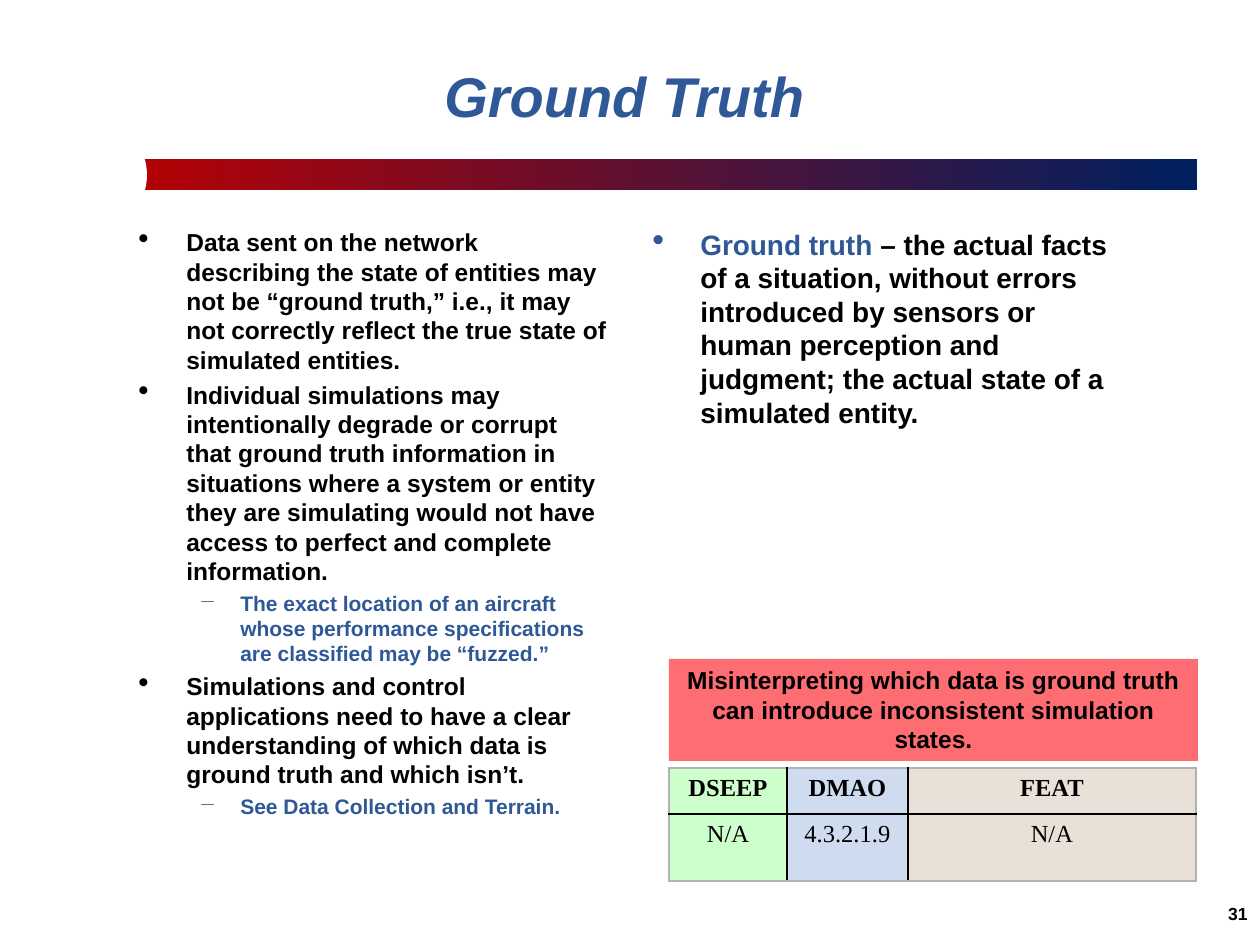
import pptx
import pptx.util
import pptx.dml.color
import pptx.enum.shapes
import pptx.enum.text
import pptx.oxml
import pptx.oxml.ns

THEME = {
    "blue": "2F5897", "black": "000000", "white": "FFFFFF", "red": "FD6D71",
    "grey": "B2B2B2", "start": "C00000", "end": "002060",
    "cols": ("CCFFCC", "CFDCF0", "E9E0D7"),
    "sans": "Arial", "serif": "Times New Roman",
    "title": 32, "lead": 16, "body": 14, "sub": 12, "page": 10,
}
TITLE = "Ground Truth"
POINTS = [
    (0, "Data sent on the network describing the state of entities may not be “ground truth,” i.e., it may not correctly reflect the true state of simulated entities."),
    (0, "Individual simulations may intentionally degrade or corrupt that ground truth information in situations where a system or entity they are simulating would not have access to perfect and complete information."),
    (1, "The exact location of an aircraft whose performance specifications are classified may be “fuzzed.”"),
    (0, "Simulations and control applications need to have a clear understanding of which data is ground truth and which isn’t."),
    (1, "See Data Collection and Terrain."),
]
TERM = "Ground truth "
MEANING = "– the actual facts of a situation, without errors introduced by sensors or human perception and judgment; the actual state of a simulated entity."
WARNING = "Misinterpreting which data is ground truth can introduce inconsistent simulation states."
ROWS = [("DSEEP", "DMAO", "FEAT"), ("N/A", "4.3.2.1.9", "N/A")]
WIDTHS = (118, 121, 288)
HEIGHTS = (46, 67)
LEVELS = [
    {"size": THEME["body"], "color": THEME["black"], "bullet": ("•", 125, 48, 48)},
    {"size": THEME["sub"], "color": THEME["blue"], "bullet": ("―", 60, 102, 39)},
]
SCALE = 914400 / 126
ALIGN = pptx.enum.text.PP_ALIGN
SHAPE = pptx.enum.shapes.MSO_SHAPE


def px(num):
    return pptx.util.Emu(round(num * SCALE))


def rgb(code):
    return pptx.dml.color.RGBColor.from_string(code)


def write(para, text, size=THEME["body"], color=THEME["black"], font=THEME["sans"],
          bold=True, italic=False, align=ALIGN.LEFT, bullet=None, gap=0):
    if bullet:
        mark, scale, left, hang = bullet
        props = para._p.get_or_add_pPr()
        props.set("marL", str(px(left)))
        props.set("indent", str(-px(hang)))
        for tag, key, val in (("buSzPct", "val", str(scale * 1000)), ("buChar", "char", mark)):
            item = pptx.oxml.ns.qn("a:" + tag)
            props.append(props.makeelement(item, {key: val}))
    para.alignment = align
    para.space_before = pptx.util.Pt(gap)
    run = para.add_run()
    run.text = text
    face = run.font
    face.name, face.size = font, pptx.util.Pt(size)
    face.bold, face.italic = bold, italic
    face.color.rgb = rgb(color)


def box(slide, *area):
    frame = slide.shapes.add_textbox(*map(px, area)).text_frame
    frame.word_wrap = True
    return frame


def block(slide, kind, color, *area):
    shape = slide.shapes.add_shape(kind, *map(px, area))
    shape.shadow.inherit = False
    shape.line.fill.background()
    shape.fill.solid()
    shape.fill.fore_color.rgb = rgb(color)
    return shape


def edge(cell, side, color, width):
    line = pptx.oxml.parse_xml(
        f'<a:{side} {pptx.oxml.ns.nsdecls("a")} w="{pptx.util.Pt(width)}">'
        f'<a:solidFill><a:srgbClr val="{color}"/></a:solidFill></a:{side}>')
    cell._tc.get_or_add_tcPr().append(line)


def banner(slide):
    bar = block(slide, SHAPE.RECTANGLE, THEME["start"], 63, 159, 1134, 31)
    bar.fill.gradient()
    bar.fill.gradient_angle = 0
    for stop, pos, name in zip(bar.fill.gradient_stops, (0, 1), ("start", "end")):
        stop.position = pos
        stop.color.rgb = rgb(THEME[name])
    block(slide, SHAPE.OVAL, THEME["white"], 31, 117, 116, 116)


def grid(slide):
    area = map(px, (669, 768, sum(WIDTHS), sum(HEIGHTS)))
    table = slide.shapes.add_table(len(ROWS), len(WIDTHS), *area).table
    for col, wide in zip(table.columns, WIDTHS):
        col.width = px(wide)
    for row, tall in zip(table.rows, HEIGHTS):
        row.height = px(tall)
    for r, row in enumerate(ROWS):
        for c, text in enumerate(row):
            cell = table.cell(r, c)
            write(cell.text_frame.paragraphs[0], text, font=THEME["serif"],
                  bold=r == 0, align=ALIGN.CENTER)
            outer = {"lnL": c == 0, "lnR": c == len(row) - 1,
                     "lnT": r == 0, "lnB": r == len(ROWS) - 1}
            for side, rim in outer.items():
                edge(cell, side, THEME["grey" if rim else "black"], 1)
            cell.fill.solid()
            cell.fill.fore_color.rgb = rgb(THEME["cols"][c])


def main():
    deck = pptx.Presentation()
    deck.slide_width, deck.slide_height = px(1260), px(945)
    slide = deck.slides.add_slide(deck.slide_layouts[6])
    banner(slide)

    head = box(slide, 84, 32, 1081, 126)
    head.vertical_anchor = pptx.enum.text.MSO_ANCHOR.MIDDLE
    write(head.paragraphs[0], TITLE, size=THEME["title"], color=THEME["blue"],
          italic=True, align=ALIGN.CENTER)

    left = box(slide, 126, 221, 494, 620)
    for i, (level, text) in enumerate(POINTS):
        para = left.add_paragraph() if i else left.paragraphs[0]
        style = LEVELS[level]
        write(para, text, gap=round(style["size"] * 0.22, 1) if i else 0, **style)

    right = box(slide, 640, 221, 494, 275).paragraphs[0]
    write(right, TERM, size=THEME["lead"], color=THEME["blue"], bullet=LEVELS[0]["bullet"])
    write(right, MEANING, size=THEME["lead"])

    page = box(slide, 1208, 897, 52, 48).paragraphs[0]
    write(page, "31", size=THEME["page"], align=ALIGN.RIGHT)

    grid(slide)
    note = block(slide, SHAPE.RECTANGLE, THEME["red"], 669, 659, 529, 102).text_frame
    note.word_wrap = True
    note.vertical_anchor = pptx.enum.text.MSO_ANCHOR.TOP
    write(note.paragraphs[0], WARNING, align=ALIGN.CENTER)
    deck.save("out.pptx")


if __name__ == "__main__":
    main()
